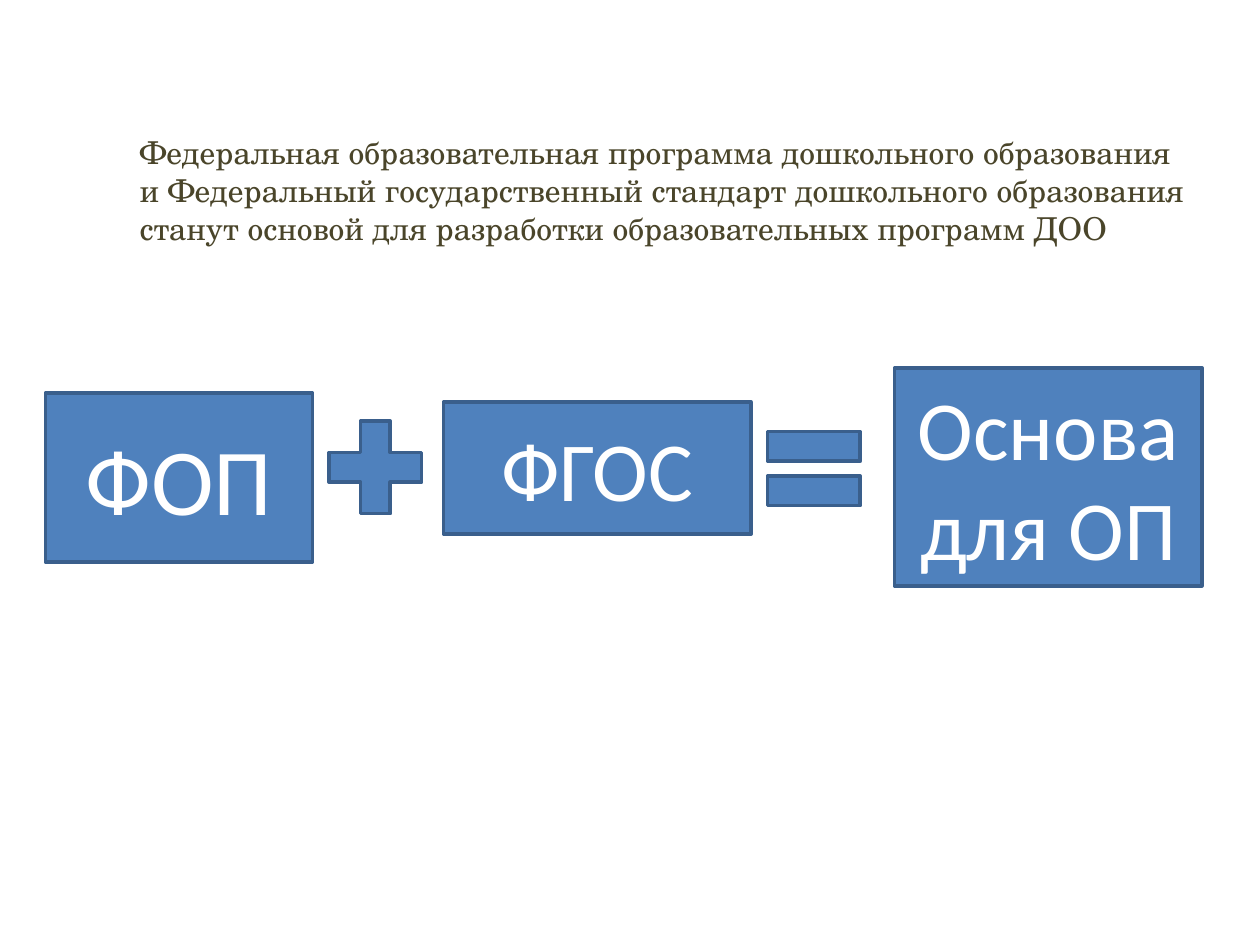
import pptx
import pptx.util
import pptx.dml.color
import pptx.enum.shapes
import pptx.enum.text

Inches = pptx.util.Inches
Pt = pptx.util.Pt
RGB = pptx.dml.color.RGBColor.from_string
SHAPE = pptx.enum.shapes.MSO_SHAPE
ALIGN = pptx.enum.text.PP_ALIGN

THEME = {
    "fill": RGB("4F81BD"),
    "line": RGB("3A5F8C"),
    "line_width": Pt(2),
    "large": {"name": "Calibri", "size": Pt(54), "color": RGB("FFFFFF")},
    "medium": {"name": "Calibri", "size": Pt(48), "color": RGB("FFFFFF")},
    "intro": {"name": "TeX Gyre Schola", "size": Pt(18), "color": RGB("4A452A")},
}


def add_line(p, text, style):
    r = p.add_run()
    r.text = text
    for key, value in style.items():
        if key == "color":
            r.font.color.rgb = value
        else:
            setattr(r.font, key, value)


prs = pptx.Presentation()
prs.slide_width = Inches(10)
prs.slide_height = Inches(7.5)
s = prs.slides.add_slide(prs.slide_layouts[6])

equation = [
    (SHAPE.RECTANGLE, 0.36, 3.12, 2.12, 1.34, "ФОП", "large"),
    (SHAPE.RECTANGLE, 3.52, 3.19, 2.44, 1.05, "ФГОС", "medium"),
    (SHAPE.RECTANGLE, 7.1, 2.92, 2.44, 1.73, "Основа для ОП", "medium"),
    (SHAPE.MATH_PLUS, 2.48, 3.21, 1, 1, None, None),
    (SHAPE.MATH_EQUAL, 5.96, 3.22, 1, 1, None, None),
]
for kind, left, top, width, height, text, style in equation:
    sp = s.shapes.add_shape(kind, Inches(left), Inches(top), Inches(width), Inches(height))
    sp.shadow.inherit = False
    sp.fill.solid()
    sp.fill.fore_color.rgb = THEME["fill"]
    sp.line.color.rgb = THEME["line"]
    sp.line.width = THEME["line_width"]
    if text:
        tf = sp.text_frame
        tf.word_wrap = True
        tf.vertical_anchor = pptx.enum.text.MSO_ANCHOR.MIDDLE
        p = tf.paragraphs[0]
        p.alignment = ALIGN.CENTER
        add_line(p, text, THEME[style])

intro = [
    "Федеральная образовательная программа дошкольного образования",
    "и Федеральный государственный стандарт дошкольного образования",
    "станут основой для разработки образовательных программ ДОО",
]
sp = s.shapes.add_textbox(Inches(1.01), Inches(1.01), Inches(8.53), Inches(1.01))
tf = sp.text_frame
tf.word_wrap = False
tf.auto_size = pptx.enum.text.MSO_AUTO_SIZE.SHAPE_TO_FIT_TEXT
for i, text in enumerate(intro):
    p = tf.add_paragraph() if i else tf.paragraphs[0]
    p.alignment = ALIGN.LEFT
    add_line(p, text, THEME["intro"])

prs.save("out.pptx")
